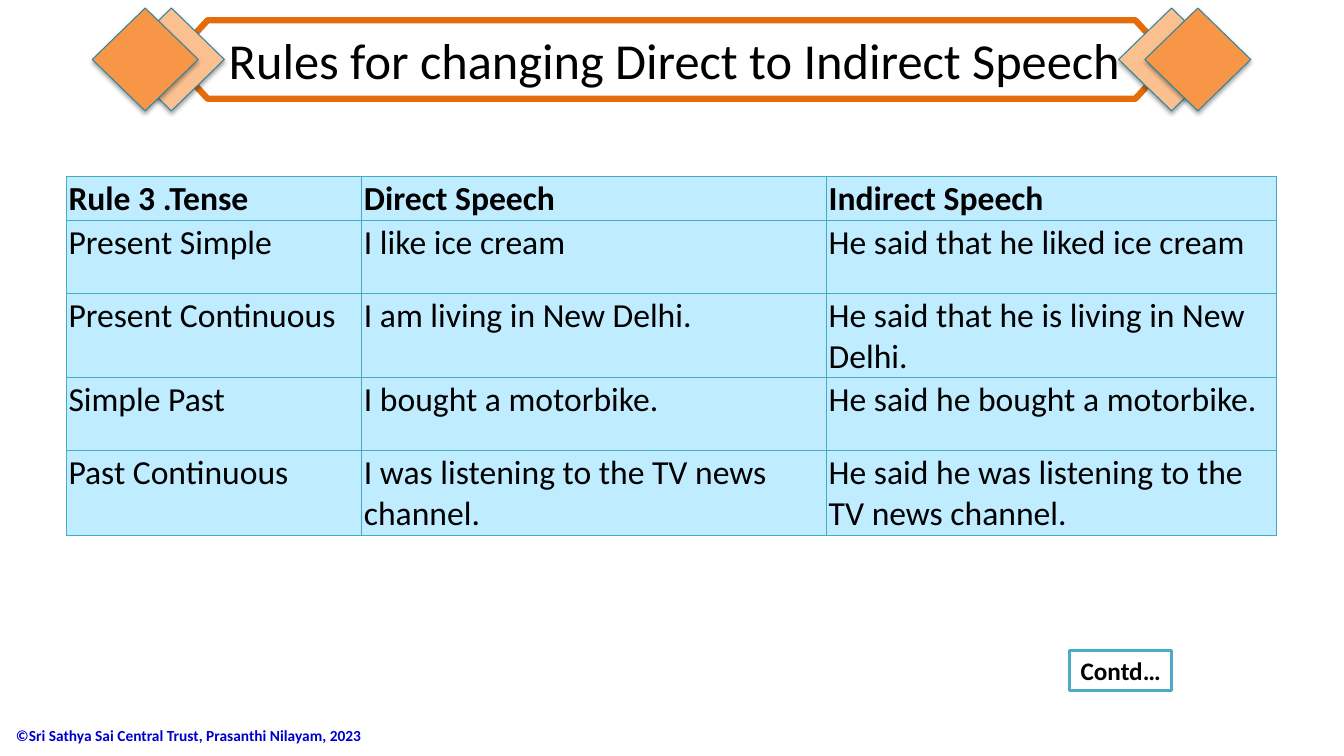
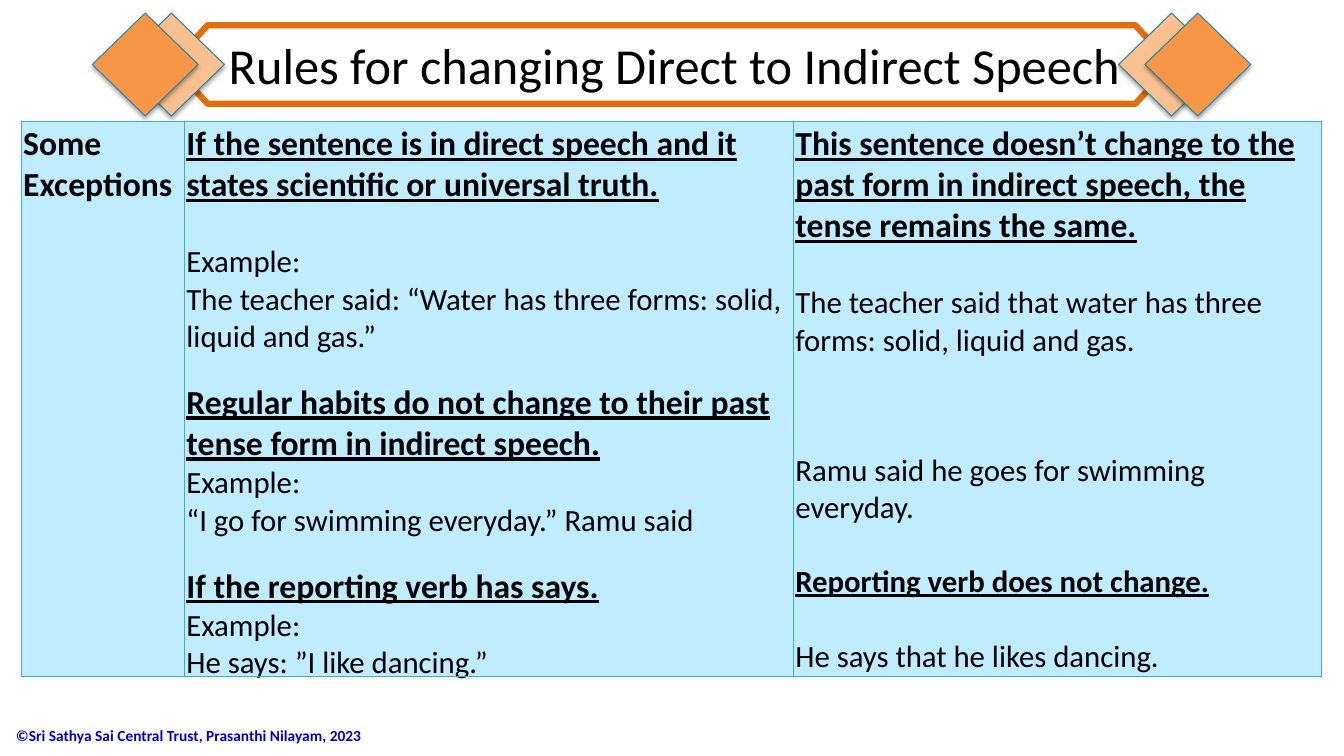
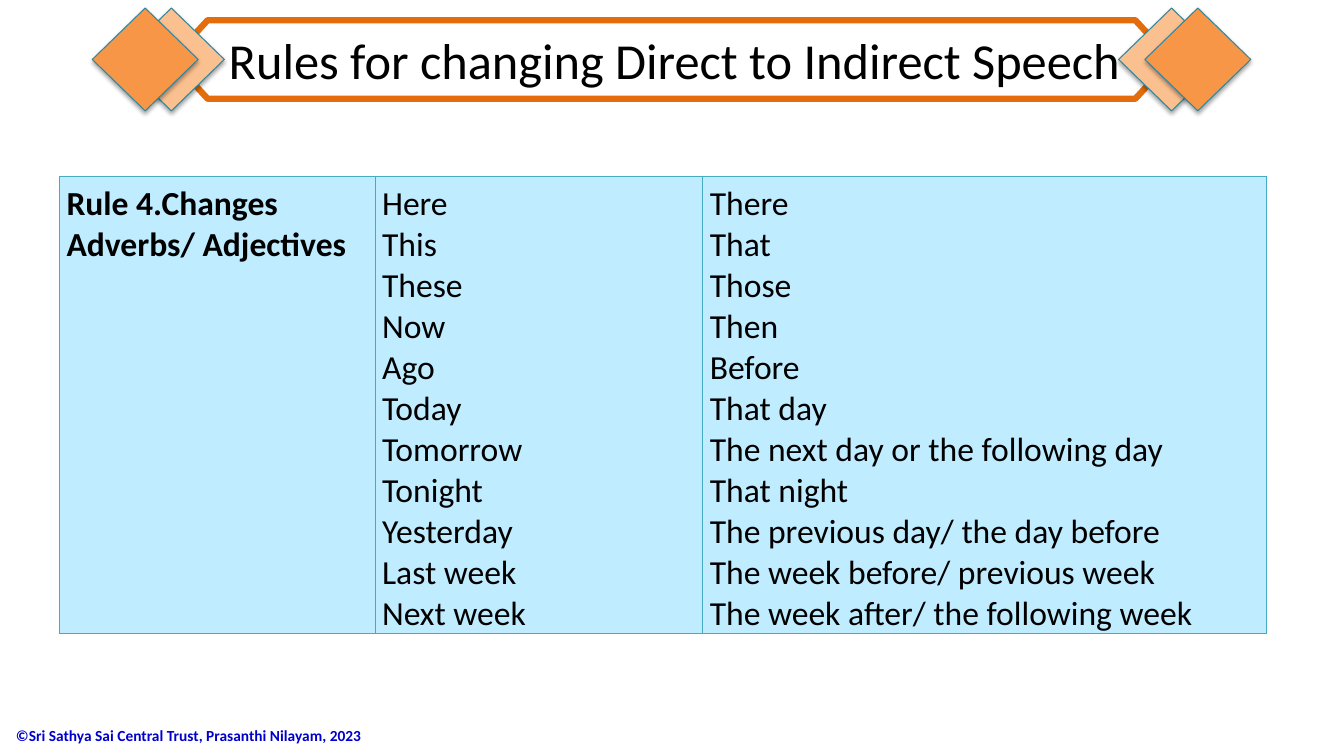
from dataclasses import dataclass

from lxml.etree import SubElement
from pptx import Presentation
from pptx.dml.color import RGBColor
from pptx.enum.shapes import MSO_SHAPE as Preset
from pptx.enum.text import MSO_ANCHOR as Anchor
from pptx.oxml.ns import qn
from pptx.util import Inches, Pt


@dataclass(frozen=True)
class Theme:
    font: str = "Calibri"
    ink: str = "000000"
    paper: str = "FFFFFF"
    copyright: str = "0000CC"
    banner_line: str = "E46C0A"
    diamond_back: str = "FAC090"
    diamond_front: str = "F79646"
    diamond_line: str = "31859C"
    cell_fill: str = "C0ECFF"
    cell_line: str = "46AAC5"
    button_line: str = "4BACC6"
    title_size: float = 36
    body_size: float = 24
    example_size: float = 22
    button_size: float = 18
    footer_size: float = 11


THEME = Theme()
TITLE = "Rules for changing Direct to Indirect Speech"
FOOTER = "©Sri Sathya Sai Central Trust, Prasanthi Nilayam, 2023"


def rgb(value):
    return RGBColor.from_string(value)


def add_text(frame, text, size=THEME.body_size, color=THEME.ink,
             bold=False, underline=False, gap=0):
    """Fill the first empty paragraph of the frame, or append one."""
    paragraph = frame.paragraphs[0]
    if paragraph.runs:
        paragraph = frame.add_paragraph()
    if gap:
        paragraph.space_before = Pt(gap)
    run = paragraph.add_run()
    run.text = text
    font = run.font
    font.name, font.size, font.color.rgb = THEME.font, Pt(size), rgb(color)
    font.bold, font.underline = bold, underline


class Deck:
    def __init__(self):
        self.file = Presentation()
        self.file.slide_width, self.file.slide_height = Inches(13.33), Inches(7.5)
        self.slide = None

    def new_slide(self, banner_top):
        self.slide = self.file.slides.add_slide(self.file.slide_layouts[6])
        self.text_box(0.06, 7.1, 3.81, 0.4, FOOTER, anchor=Anchor.MIDDLE,
                      size=THEME.footer_size, color=THEME.copyright, bold=True)
        self.banner(banner_top)

    def text_box(self, left, top, width, height, text, anchor=Anchor.TOP, **style):
        box = self.slide.shapes.add_textbox(
            Inches(left), Inches(top), Inches(width), Inches(height))
        box.text_frame.word_wrap = True
        box.text_frame.vertical_anchor = anchor
        add_text(box.text_frame, text, **style)

    def paint(self, shape, fill, line, weight):
        shape.shadow.inherit = False
        shape.fill.solid()
        shape.fill.fore_color.rgb = rgb(fill)
        shape.line.color.rgb = rgb(line)
        shape.line.width = Pt(weight)

    def banner(self, top):
        # Six-sided frame
        middle, bottom = top + 0.39, top + 0.78
        corners = [(2.06, top), (11.26, top), (11.62, middle),
                   (11.26, bottom), (2.06, bottom), (1.7, middle)]
        start, *rest = [(Inches(x), Inches(y)) for x, y in corners]
        outline = self.slide.shapes.build_freeform(*start)
        outline.add_line_segments(rest, close=True)
        self.paint(outline.convert_to_shape(), THEME.paper, THEME.banner_line, 4.5)

        # Diamonds, the pale pair behind the strong pair
        for color, centers in ((THEME.diamond_back, (1.7, 11.62)),
                               (THEME.diamond_front, (1.44, 11.88))):
            for center in centers:
                self.diamond(center, middle, color)
        self.text_box(2.17, top + 0.04, 9.19, 0.71, TITLE, size=THEME.title_size)

    def diamond(self, center, middle, color, width=1.05, height=1.02):
        diamond = self.slide.shapes.add_shape(
            Preset.DIAMOND, Inches(center - width / 2), Inches(middle - height / 2),
            Inches(width), Inches(height))
        self.paint(diamond, color, THEME.diamond_line, 0.75)
        effects = diamond._element.spPr.find(qn("a:effectLst"))
        shadow = SubElement(effects, qn("a:outerShdw"), blurRad=str(Pt(3.1)),
                            dist=str(Pt(1.8)), dir="5400000", rotWithShape="0")
        black = SubElement(shadow, qn("a:srgbClr"), val=THEME.ink)
        SubElement(black, qn("a:alpha"), val="35000")

    def button(self, left, top, width, height, text):
        button = self.slide.shapes.add_shape(
            Preset.RECTANGLE, Inches(left), Inches(top), Inches(width), Inches(height))
        self.paint(button, THEME.paper, THEME.button_line, 2)
        button.text_frame.word_wrap = False
        add_text(button.text_frame, text, size=THEME.button_size, bold=True)

    def table(self, left, top, columns, heights, rows, margin, bottom):
        table = self.slide.shapes.add_table(
            len(rows), len(columns), Inches(left), Inches(top),
            Inches(sum(columns)), Inches(sum(heights))).table
        table.first_row = table.horz_banding = False
        for column, width in zip(table.columns, columns):
            column.width = Inches(width)
        for row, height, contents in zip(table.rows, heights, rows):
            row.height = Inches(height)
            for cell, paragraphs in zip(row.cells, contents):
                self.cell(cell, paragraphs, margin, bottom)

    def cell(self, cell, paragraphs, margin, bottom):
        cell.margin_left = cell.margin_right = cell.margin_top = Inches(margin)
        cell.margin_bottom = Inches(bottom)
        properties = cell._tc.get_or_add_tcPr()
        for side in ("lnL", "lnR", "lnT", "lnB"):
            border = SubElement(properties, qn(f"a:{side}"), w=str(Pt(0.75)))
            SubElement(SubElement(border, qn("a:solidFill")),
                       qn("a:srgbClr"), val=THEME.cell_line)
        cell.fill.solid()
        cell.fill.fore_color.rgb = rgb(THEME.cell_fill)
        for text, style in paragraphs:
            add_text(cell.text_frame, text, **style)


# Paragraph kinds used in the tables
def plain(text):
    return text, {}


def strong(text):
    return text, {"bold": True}


def rule(text, gap=0, size=THEME.body_size):
    return text, {"bold": True, "underline": True, "gap": gap, "size": size}


def example(text, gap=0):
    return text, {"size": THEME.example_size, "gap": gap}


TENSES = [
    ("Rule 3 .Tense", "Direct Speech", "Indirect Speech"),
    ("Present Simple", "I like ice cream", "He said that he liked ice cream"),
    ("Present Continuous", "I am living in New Delhi.",
     "He said that he is living in New Delhi."),
    ("Simple Past", "I bought a motorbike.", "He said he bought a motorbike."),
    ("Past Continuous", "I was listening to the TV news channel.",
     "He said he was listening to the TV news channel."),
]

EXCEPTIONS = [
    [strong("Some"), strong("Exceptions")],
    [rule("If the sentence is in direct speech and it states scientific "
          "or universal truth."),
     example("Example:", gap=27),
     example("The teacher said: “Water has three forms: solid, liquid and gas.”"),
     rule("Regular habits do not change to their past tense form "
          "in indirect speech.", gap=19),
     example("Example:"),
     example("“I go for swimming everyday.” Ramu said"),
     rule("If the reporting verb has says.", gap=19),
     example("Example:"),
     example("He says: ”I like dancing.”")],
    [rule("This sentence doesn’t change to the past form in indirect speech, "
          "the tense remains the same."),
     example("The teacher said that water has three forms: solid, "
             "liquid and gas.", gap=27),
     example("Ramu said he goes for swimming everyday.", gap=66),
     rule("Reporting verb does not change.", gap=26, size=THEME.example_size),
     example("He says that he likes dancing.", gap=27)],
]

ADVERBS = [
    ("Here", "There"),
    ("This", "That"),
    ("These", "Those"),
    ("Now", "Then"),
    ("Ago", "Before"),
    ("Today", "That day"),
    ("Tomorrow", "The next day or the following day"),
    ("Tonight", "That night"),
    ("Yesterday", "The previous day/ the day before"),
    ("Last week", "The week before/ previous week"),
    ("Next week", "The week after/ the following week"),
]


def main():
    deck = Deck()

    # Rule 3: tenses
    deck.new_slide(banner_top=0.2)
    header, *lines = TENSES
    rows = [[[strong(text)] for text in header]]
    rows += [[[plain(text)] for text in line] for line in lines]
    deck.table(0.66, 1.75, [2.93, 4.61, 4.46], [0.38] + [0.72] * len(lines),
               rows, margin=0.02, bottom=0.02)
    deck.button(10.61, 6.45, 1.01, 0.4, "Contd…")

    # Exceptions
    deck.new_slide(banner_top=0.25)
    deck.table(0.21, 1.21, [1.62, 6.04, 5.24], [5.5], [EXCEPTIONS],
               margin=0.02, bottom=0)

    # Rule 4: adverbs and adjectives
    deck.new_slide(banner_top=0.2)
    direct, indirect = ([plain(word) for word in words] for words in zip(*ADVERBS))
    deck.table(0.59, 1.75, [3.13, 3.25, 5.59], [4.53],
               [[[strong("Rule 4.Changes Adverbs/ Adjectives")], direct, indirect]],
               margin=0.07, bottom=0)

    deck.file.save("out.pptx")


if __name__ == "__main__":
    main()
